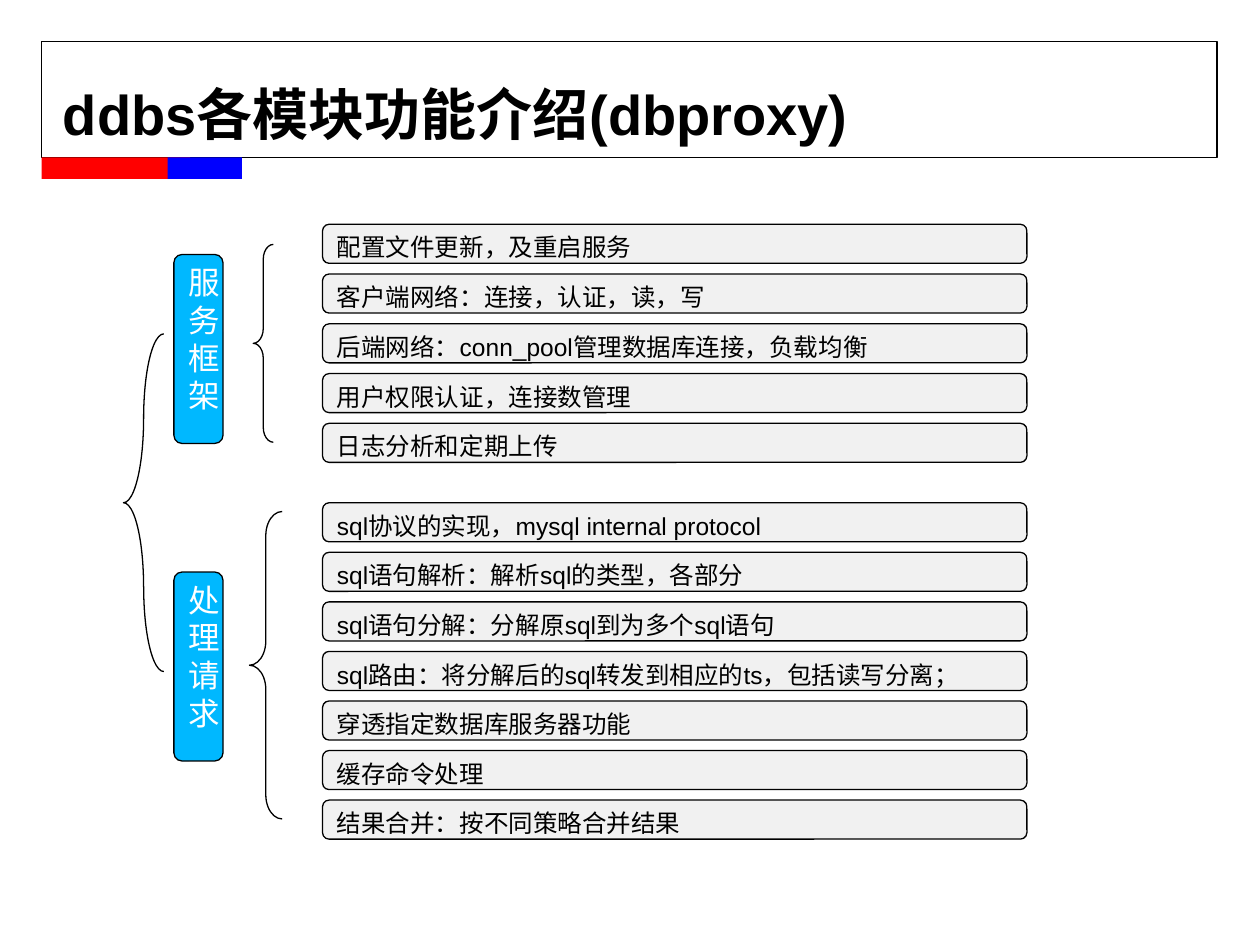
from pptx import Presentation
from pptx.dml.color import RGBColor
from pptx.enum.shapes import MSO_SHAPE
from pptx.enum.text import MSO_ANCHOR, PP_ALIGN
from pptx.util import Inches, Pt

COLORS = {
    "ink": "000000",
    "red": "FF0000",
    "blue": "0000FF",
    "module": "00B8FF",
    "module_text": "FFFFFF",
    "feature": "F1F1F1",
}
FONT = "Arial"

# Module name, label top, top of first and last feature, features
MODULES = [
    ("服务框架", 2.02, 1.78, 3.36, [
        "配置文件更新，及重启服务",
        "客户端网络：连接，认证，读，写",
        "后端网络：conn_pool管理数据库连接，负载均衡",
        "用户权限认证，连接数管理",
        "日志分析和定期上传",
    ]),
    ("处理请求", 4.54, 3.99, 6.35, [
        "sql协议的实现，mysql internal protocol",
        "sql语句解析：解析sql的类型，各部分",
        "sql语句分解：分解原sql到为多个sql语句",
        "sql路由：将分解后的sql转发到相应的ts，包括读写分离；",
        "穿透指定数据库服务器功能",
        "缓存命令处理",
        "结果合并：按不同策略合并结果",
    ]),
]

# Left, top, width, height, curve of each brace
BRACES = [
    (2.01, 1.94, 0.16, 1.57, 0.74),
    (1.98, 4.06, 0.26, 2.44, 0.74),
    (0.98, 2.65, 0.32, 2.68, 2.3),
]


def color(name):
    return RGBColor.from_string(COLORS[name])


def add_box(slide, kind, left, top, width, height, fill=None, outlined=True):
    box = slide.shapes.add_shape(
        kind, Inches(left), Inches(top), Inches(width), Inches(height))
    box.shadow.inherit = False
    if fill:
        box.fill.solid()
        box.fill.fore_color.rgb = color(fill)
    else:
        box.fill.background()
    if outlined:
        box.line.color.rgb = color("ink")
        box.line.width = Pt(0.75)
    else:
        box.line.fill.background()
    return box


def write(box, text, size, ink="ink", align=PP_ALIGN.LEFT,
          anchor=MSO_ANCHOR.TOP, bold=False):
    frame = box.text_frame
    frame.text = text
    frame.word_wrap = True
    frame.vertical_anchor = anchor
    paragraph = frame.paragraphs[0]
    paragraph.alignment = align
    font = paragraph.runs[0].font
    font.name = FONT
    font.size = Pt(size)
    font.bold = bold
    font.color.rgb = color(ink)


def add_title(slide, text):
    title = slide.shapes.add_textbox(
        Inches(0.5), Inches(0.3), Inches(9), Inches(1.25))
    write(title, text, 32, anchor=MSO_ANCHOR.MIDDLE, bold=True)
    frame = title.text_frame
    frame.margin_left = frame.margin_right = 0
    frame.margin_top = frame.margin_bottom = 0
    frame.paragraphs[0].line_spacing = 0.93


def add_brace(slide, left, top, width, height, curve):
    brace = add_box(slide, MSO_SHAPE.LEFT_BRACE, left, top, width, height)
    brace.adjustments[0] = curve


def add_module(slide, name, label_top, first, last, features):
    label = add_box(slide, MSO_SHAPE.ROUNDED_RECTANGLE,
                    1.38, label_top, 0.39, 1.5, "module")
    write(label, name, 18, "module_text", PP_ALIGN.CENTER)
    step = (last - first) / (len(features) - 1)
    for index, feature in enumerate(features):
        row = add_box(slide, MSO_SHAPE.ROUNDED_RECTANGLE,
                      2.56, first + index * step, 5.59, 0.31, "feature")
        write(row, feature, 14)


def main():
    presentation = Presentation()
    presentation.slide_width = Inches(10)
    presentation.slide_height = Inches(7.5)
    slide = presentation.slides.add_slide(presentation.slide_layouts[6])

    # Title frame with its two colour bars
    add_box(slide, MSO_SHAPE.RECTANGLE, 0.33, 0.33, 9.33, 0.92)
    add_box(slide, MSO_SHAPE.RECTANGLE, 0.33, 1.25, 1.18, 0.17, "red", False)
    add_box(slide, MSO_SHAPE.RECTANGLE, 1.33, 1.25, 0.59, 0.17, "blue", False)
    add_title(slide, "ddbs各模块功能介绍(dbproxy)")

    # Modules with their features
    for module in MODULES:
        add_module(slide, *module)

    # Braces that group them
    for brace in BRACES:
        add_brace(slide, *brace)

    presentation.save("out.pptx")


if __name__ == "__main__":
    main()
